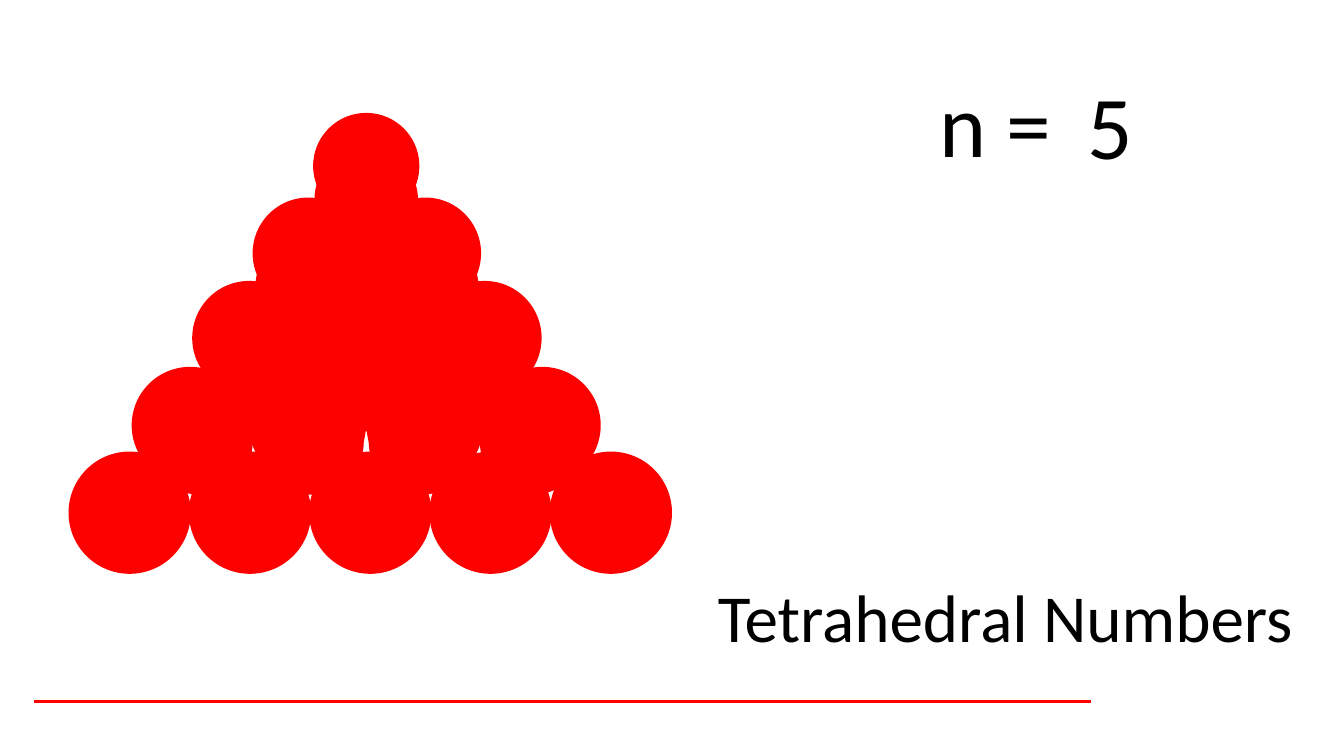
from dataclasses import dataclass

from lxml import etree
from pptx import Presentation
from pptx import util as u
from pptx.dml.color import RGBColor
from pptx.enum import shapes, text
from pptx.oxml.ns import qn

PX = 9144  # EMU; 100 px to the inch


@dataclass(frozen=True)
class Theme:
    font: str = "Calibri"
    ink: RGBColor = RGBColor(0x00, 0x00, 0x00)
    ball: RGBColor = RGBColor(0xFD, 0x01, 0x00)
    rule: RGBColor = RGBColor(0xFF, 0x00, 0x00)
    title_size: int = 36
    formula_size: int = 48


@dataclass(frozen=True)
class BallRow:
    """Equal balls, with evenly spaced left edges from first to last."""
    first: int
    last: int
    top: int
    size: int
    count: int = 1


@dataclass(frozen=True)
class Label:
    words: str
    left: int
    top: int
    width: int
    height: int


THEME = Theme()

# Each layer of the pyramid, from the rearmost to the front
LAYERS = [
    [BallRow(245, 245, 180, 63), BallRow(206, 275, 211, 67, 2),
     BallRow(157, 316, 250, 71, 3), BallRow(109, 357, 289, 79, 4)],
    [BallRow(241, 241, 172, 63), BallRow(201, 272, 203, 71, 2),
     BallRow(154, 311, 234, 79, 3)],
    [BallRow(237, 237, 142, 71), BallRow(190, 277, 174, 79, 2)],
    [BallRow(234, 234, 110, 77)],
    [BallRow(233, 233, 84, 79), BallRow(188, 275, 147, 83, 2),
     BallRow(143, 318, 209, 85, 3), BallRow(98, 360, 273, 87, 4),
     BallRow(51, 409, 336, 91, 5)],
]
TITLE = Label("Tetrahedral Numbers", 413, 423, 559, 71)
FORMULA = [Label("n =", 689, 46, 126, 91), Label("5", 799, 47, 126, 91)]


def px(n: float) -> u.Emu:
    return u.Emu(round(n * PX))


def write(shape, label: Label, size: int, align: text.PP_ALIGN) -> None:
    shape.left, shape.top = px(label.left), px(label.top)
    shape.width, shape.height = px(label.width), px(label.height)
    tf = shape.text_frame
    tf.text = label.words
    tf.word_wrap = True
    tf.auto_size = text.MSO_AUTO_SIZE.SHAPE_TO_FIT_TEXT
    tf.vertical_anchor = text.MSO_ANCHOR.TOP
    p = tf.paragraphs[0]
    p.alignment = align
    p.font.name = THEME.font
    p.font.size = u.Pt(size)
    p.font.color.rgb = THEME.ink


def draw_row(s, row: BallRow) -> None:
    pitch = (row.last - row.first) / max(row.count - 1, 1)
    for i in reversed(range(row.count)):
        ball = s.shapes.add_shape(
            shapes.MSO_SHAPE.OVAL, px(row.first + i * pitch), px(row.top),
            px(row.size), px(row.size))
        ball.shadow.inherit = False
        ball.fill.solid()
        ball.fill.fore_color.rgb = THEME.ball
        ball.line.fill.background()


def draw_rule(s, left: int, right: int, y: int) -> None:
    rule = s.shapes.add_connector(
        shapes.MSO_CONNECTOR.STRAIGHT, px(left), px(y), px(right), px(y))
    rule.line.color.rgb = THEME.rule
    rule.line.width = u.Pt(2)
    etree.SubElement(rule._element.spPr, qn("a:effectLst"))


def main() -> None:
    prs = Presentation()
    prs.slide_width = px(1000)
    prs.slide_height = u.Emu(prs.slide_width * 9 // 16)
    s = prs.slides.add_slide(prs.slide_layouts[5])
    write(s.shapes.title, TITLE, THEME.title_size, text.PP_ALIGN.RIGHT)
    draw_rule(s, 25, 812, 522)
    for label in FORMULA:
        box = s.shapes.add_textbox(0, 0, 0, 0)
        write(box, label, THEME.formula_size, text.PP_ALIGN.LEFT)
    for layer in LAYERS:
        for row in layer:
            draw_row(s, row)
    prs.save("out.pptx")


if __name__ == "__main__":
    main()
